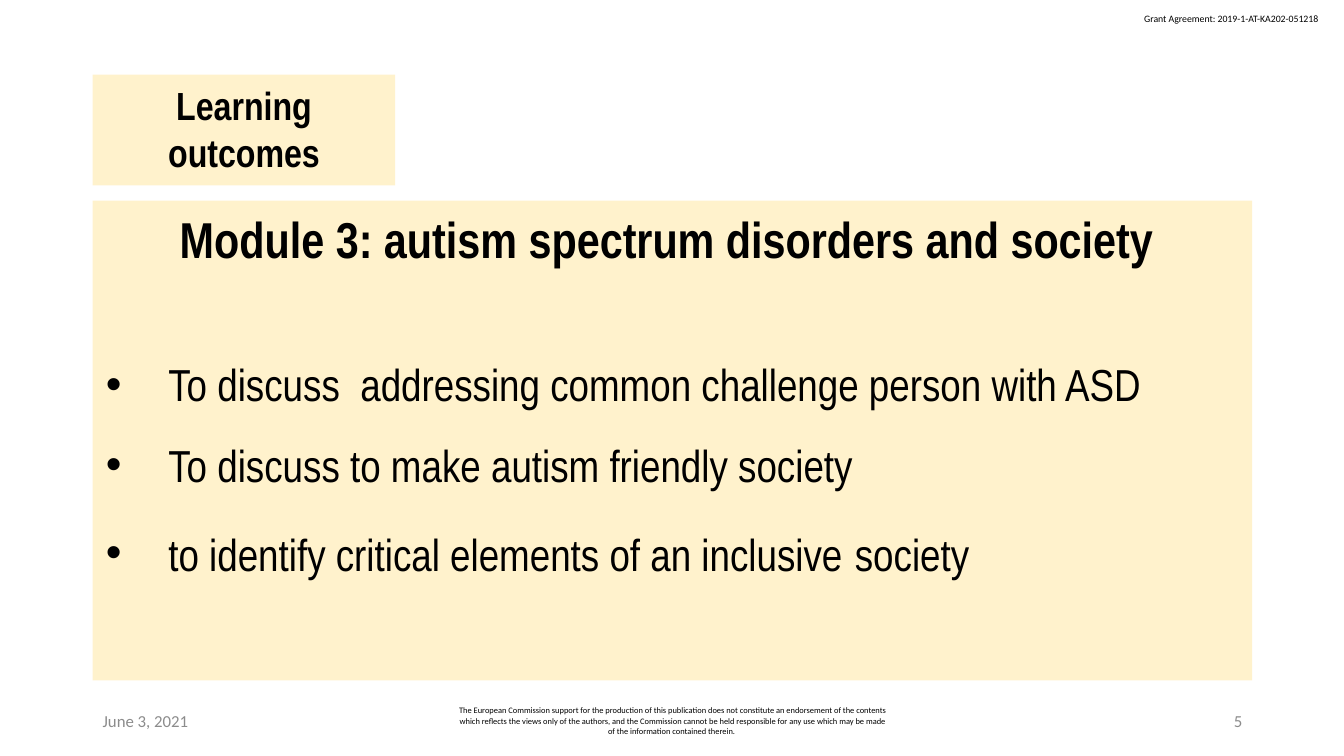
from dataclasses import dataclass

from lxml import etree
from pptx import Presentation
from pptx.dml.color import RGBColor
from pptx.enum import shapes, text
from pptx.oxml import ns
from pptx.util import Inches, Pt


@dataclass(frozen=True)
class Theme:
    ink: RGBColor = RGBColor(0x00, 0x00, 0x00)
    muted: RGBColor = RGBColor(0x8C, 0x8C, 0x8C)
    panel: RGBColor = RGBColor(0xFF, 0xF2, 0xCC)
    body_font: str = "Arial Narrow"
    small_font: str = "Calibri"
    heading: int = 36
    outcome: int = 32
    label: int = 28
    footer: int = 12
    grant: int = 7
    disclaimer: int = 6


THEME = Theme()
ALIGN = text.PP_ALIGN
ANCHOR = text.MSO_ANCHOR


@dataclass(frozen=True)
class Span:
    wording: str
    size: int
    font: str = THEME.body_font
    color: RGBColor = THEME.ink
    bold: bool = False


@dataclass(frozen=True)
class Para:
    spans: tuple[Span, ...]
    align: ALIGN = ALIGN.LEFT
    bullet: bool = False
    space_before: int = 0


@dataclass(frozen=True)
class Area:
    left: float
    top: float
    width: float
    height: float


@dataclass(frozen=True)
class Caption:
    area: Area
    para: Para
    anchor: ANCHOR = ANCHOR.MIDDLE
    wrap: bool = True


@dataclass(frozen=True)
class Panel:
    area: Area
    paras: tuple[Para, ...]


def small(wording: str, size: int, color: RGBColor = THEME.ink) -> tuple[Span, ...]:
    return (Span(wording, size, THEME.small_font, color),)


def outcome(*spans: Span, space_before: int = 0) -> Para:
    return Para(spans, bullet=True, space_before=space_before)


MARGIN = 0.92
FOOTER_TOP, FOOTER_HEIGHT = 6.95, 0.4

CAPTIONS = (
    Caption(
        Area(11.25, 0.08, 1.97, 0.22),
        Para(small("Grant Agreement: 2019-1-AT-KA202-051218", THEME.grant)),
        ANCHOR.TOP,
        wrap=False,
    ),
    Caption(
        Area(MARGIN, FOOTER_TOP, 3, FOOTER_HEIGHT),
        Para(small("June 3, 2021", THEME.footer, THEME.muted)),
    ),
    Caption(
        Area(4.42, FOOTER_TOP, 4.5, FOOTER_HEIGHT),
        Para(
            small(
                "The European Commission support for the production of this publication "
                "does not constitute an endorsement of the contents which reflects the "
                "views only of the authors, and the Commission cannot be held responsible "
                "for any use which may be made of the information contained therein. ",
                THEME.disclaimer,
            ),
            ALIGN.CENTER,
        ),
    ),
    Caption(
        Area(9.42, FOOTER_TOP, 3, FOOTER_HEIGHT),
        Para(small("5", THEME.footer, THEME.muted), ALIGN.RIGHT),
    ),
)

PANELS = (
    Panel(
        Area(MARGIN, 0.74, 3, 1.1),
        (Para((Span("Learning outcomes", THEME.label, bold=True),), ALIGN.CENTER),),
    ),
    Panel(
        Area(MARGIN, 1.99, 11.5, 4.76),
        (
            Para(
                (
                    Span(
                        "Module 3: autism spectrum disorders and society ",
                        THEME.heading,
                        bold=True,
                    ),
                ),
                ALIGN.CENTER,
            ),
            outcome(
                Span("To discuss  addressing common challenge person with ASD", THEME.outcome),
                space_before=44,
            ),
            outcome(Span("To discuss to make autism friendly society", THEME.outcome)),
            outcome(
                Span("to identify critical elements of an inclusive", THEME.outcome),
                Span(" ", THEME.heading),
                Span("society", THEME.outcome),
            ),
        ),
    ),
)


def add_bullet(paragraph) -> None:
    properties = paragraph._p.get_or_add_pPr()
    indent = Inches(0.62)
    properties.set("marL", str(indent))
    properties.set("indent", str(-indent))
    font = etree.SubElement(properties, ns.qn("a:buFont"))
    font.set("typeface", "Arial")
    mark = etree.SubElement(properties, ns.qn("a:buChar"))
    mark.set("char", "•")
    paragraph.line_spacing = 1.5


def write_paras(frame, paras: tuple[Para, ...]) -> None:
    for index, para in enumerate(paras):
        paragraph = frame.add_paragraph() if index else frame.paragraphs[0]
        paragraph.alignment = para.align
        if para.bullet:
            add_bullet(paragraph)
        if para.space_before:
            paragraph.space_before = Pt(para.space_before)
        for span in para.spans:
            run = paragraph.add_run()
            run.text = span.wording
            run.font.name = span.font
            run.font.size = Pt(span.size)
            run.font.bold = span.bold
            run.font.color.rgb = span.color


def place(area: Area) -> tuple[int, int, int, int]:
    return Inches(area.left), Inches(area.top), Inches(area.width), Inches(area.height)


def draw_caption(page, caption: Caption) -> None:
    frame = page.shapes.add_textbox(*place(caption.area)).text_frame
    frame.word_wrap = caption.wrap
    frame.vertical_anchor = caption.anchor
    write_paras(frame, (caption.para,))


def draw_panel(page, panel: Panel) -> None:
    box = page.shapes.add_shape(shapes.MSO_SHAPE.RECTANGLE, *place(panel.area))
    box.shadow.inherit = False
    box.fill.solid()
    box.fill.fore_color.rgb = THEME.panel
    box.line.fill.background()
    frame = box.text_frame
    frame.word_wrap = True
    frame.vertical_anchor = ANCHOR.TOP
    frame.margin_left = frame.margin_right = Inches(0.13)
    frame.margin_top = frame.margin_bottom = Inches(0.07)
    write_paras(frame, panel.paras)


def main() -> None:
    deck = Presentation()
    deck.slide_width, deck.slide_height = Inches(13.33), Inches(7.5)
    page = deck.slides.add_slide(deck.slide_layouts[6])
    for caption in CAPTIONS:
        draw_caption(page, caption)
    for panel in PANELS:
        draw_panel(page, panel)
    deck.save("out.pptx")


if __name__ == "__main__":
    main()
